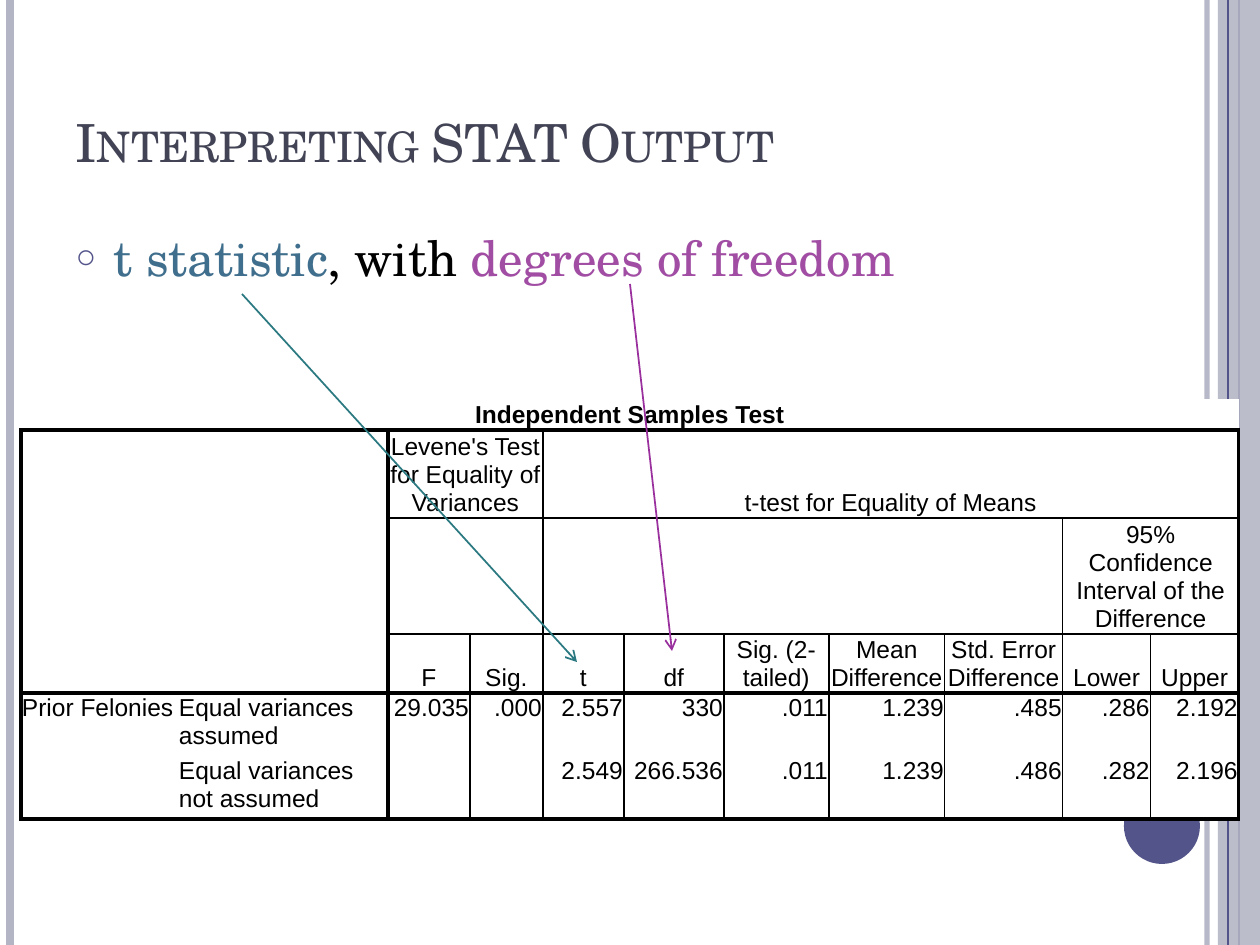
from lxml import etree
from pptx import Presentation
from pptx.dml.color import RGBColor
from pptx.enum.shapes import MSO_CONNECTOR, MSO_SHAPE
from pptx.enum.text import MSO_ANCHOR, MSO_AUTO_SIZE, PP_ALIGN
from pptx.oxml.ns import qn
from pptx.util import Pt

STRAIGHT = MSO_CONNECTOR.STRAIGHT
RECT, OVAL = MSO_SHAPE.RECTANGLE, MSO_SHAPE.OVAL
TOP, BOTTOM, MIDDLE = MSO_ANCHOR.TOP, MSO_ANCHOR.BOTTOM, MSO_ANCHOR.MIDDLE
LEFT, CENTER, RIGHT = PP_ALIGN.LEFT, PP_ALIGN.CENTER, PP_ALIGN.RIGHT
NO_FIT = MSO_AUTO_SIZE.NONE

SCALE = 914400 / 126
COLORS = {
    "white": "FFFFFF", "black": "000000", "lavender": "B3B4C4",
    "indigo": "53548A", "title": "424456", "t_text": "406F8D",
    "df_text": "A04DA3", "t_arrow": "2B7981", "df_arrow": "9A309E",
}
SERIF, SANS = "TeX Gyre Schola", "Arial"


def emu(*lengths):
    return [round(length * SCALE) for length in lengths]


def draw_line(x1, y1, x2, y2, color, width, alpha=100, arrow=False):
    connector = slide.shapes.add_connector(STRAIGHT, *emu(x1, y1, x2, y2))
    connector.line.color.rgb = RGBColor.from_string(COLORS[color])
    connector.line.width = Pt(width)
    properties = connector._element.spPr
    outline = properties.find(qn("a:ln"))
    if alpha < 100:
        shade = outline.find(".//" + qn("a:srgbClr"))
        etree.SubElement(shade, qn("a:alpha"), val=str(alpha * 1000))
    if arrow:
        etree.SubElement(outline, qn("a:tailEnd"), type="arrow")
    etree.SubElement(properties, qn("a:effectLst"))


prs = Presentation()
prs.slide_width, prs.slide_height = emu(1260, 945)
slide = prs.slides.add_slide(prs.slide_layouts[1])

draw_line(1207, 0, 1207, 945, "lavender", 3, alpha=93)
draw_line(10, 0, 10, 945, "lavender", 4.5)
draw_line(1239, 0, 1239, 945, "indigo", 1.5)
for kind, box, color, alpha in [
    (RECT, (1218, 0, 42, 945), "lavender", 87),
    (OVAL, (1124, 788, 76, 76), "indigo", 100),
]:
    ornament = slide.shapes.add_shape(kind, *emu(*box))
    ornament.shadow.inherit = False
    ornament.fill.solid()
    ornament.fill.fore_color.rgb = RGBColor.from_string(COLORS[color])
    ornament.line.fill.background()
    if alpha < 100:
        shade = ornament._element.spPr.find(".//" + qn("a:srgbClr"))
        etree.SubElement(shade, qn("a:alpha"), val=str(alpha * 1000))
draw_line(1228, 0, 1228, 945, "indigo", 0.75)

title, body = slide.placeholders
for holder, box, anchor, size, parts in [
    (title, (63, 38, 1134, 141), BOTTOM, 30, [("Interpreting STAT Output", "title")]),
    (body, (63, 221, 1134, 210), TOP, 28,
     [("t statistic", "t_text"), (", with ", "black"), ("degrees of freedom", "df_text")]),
]:
    holder.left, holder.top, holder.width, holder.height = emu(*box)
    frame = holder.text_frame
    frame.auto_size = NO_FIT
    frame.vertical_anchor = anchor
    paragraph = frame.paragraphs[0]
    paragraph.alignment = LEFT
    for words, color in parts:
        run = paragraph.add_run()
        run.text = words
        for attribute, value in {"name": SERIF, "size": Pt(size)}.items():
            setattr(run.font, attribute, value)
        run.font.color.rgb = RGBColor.from_string(COLORS[color])

title.text_frame.paragraphs[0].runs[0]._r.get_or_add_rPr().set("cap", "small")

statement = body.text_frame.paragraphs[0]
statement.space_before = Pt(6)
bullet = statement._p.get_or_add_pPr()
indent = emu(38)[0]
bullet.set("marL", str(indent))
bullet.set("indent", str(-indent))
bullet_color = etree.SubElement(bullet, qn("a:buClr"))
etree.SubElement(bullet_color, qn("a:srgbClr"), val=COLORS["indigo"])
etree.SubElement(bullet, qn("a:buSzPct"), val="70000")
etree.SubElement(bullet, qn("a:buChar"), char="○")

column_widths = [157, 210, 82, 73, 81, 100, 105, 116, 118, 88, 88]
row_heights = [31, 88, 116, 59, 63, 63]
test_rows = [
    [("Independent Samples Test", 11)],
    [("", 1), ("", 1), ("Levene's Test for Equality of Variances", 2),
     ("t-test for Equality of Means", 7)],
    [("", 1), ("", 1), ("", 2), ("", 5),
     ("95% Confidence Interval of the Difference", 2)],
    [(label, 1) for label in ["", "", "F", "Sig.", "t", "df", "Sig. (2-tailed)",
                              "Mean Difference", "Std. Error Difference",
                              "Lower", "Upper"]],
    [(value, 1) for value in ["Prior Felonies", "Equal variances assumed", "29.035",
                              ".000", "2.557", "330", ".011", "1.239", ".485",
                              ".286", "2.192"]],
    [(value, 1) for value in ["", "Equal variances not assumed", "", "", "2.549",
                              "266.536", ".011", "1.239", ".486", ".282", "2.196"]],
]
THICK, THIN = 2.25, 1
row_edges = {1: THICK, 2: THIN, 3: THIN, 4: THICK, 6: THICK}
column_edges = {0: THICK, 2: THICK, 11: THICK, **dict.fromkeys(range(3, 11), THIN)}

table_frame = slide.shapes.add_table(
    len(row_heights), len(column_widths),
    *emu(21, 399, sum(column_widths), sum(row_heights)))
table = table_frame.table
table.first_row = table.horz_banding = False
table._tbl.tblPr.find(qn("a:tableStyleId")).text = "{2D5ABB26-0587-4C30-8999-92F81FD0307C}"
for column, width in zip(table.columns, emu(*column_widths)):
    column.width = width
for row, height in zip(table.rows, emu(*row_heights)):
    row.height = height

margin = emu(1)[0]
for r, entries in enumerate(test_rows):
    c = 0
    for words, span in entries:
        cell = table.cell(r, c)
        if cell.is_spanned:
            c += span
            continue
        depth = 2 if (r, c) == (4, 0) else 1
        if span > 1 or depth > 1:
            cell.merge(table.cell(r + depth - 1, c + span - 1))
        cell_format = {
            "margin_left": margin, "margin_right": margin,
            "margin_top": margin, "margin_bottom": margin,
            "vertical_anchor": MIDDLE if r == 0 else BOTTOM if r < 4 else TOP,
        }
        for attribute, value in cell_format.items():
            setattr(cell, attribute, value)
        paragraph = cell.text_frame.paragraphs[0]
        paragraph.alignment = CENTER if r < 4 else LEFT if c < 2 else RIGHT
        paragraph.line_spacing = Pt(16)
        if words:
            run = paragraph.add_run()
            run.text = words
            for attribute, value in {"name": SANS, "size": Pt(14), "bold": r == 0}.items():
                setattr(run.font, attribute, value)
            run.font.color.rgb = RGBColor.from_string(COLORS["black"])
        sides = {
            "a:lnL": column_edges.get(c) if r else None,
            "a:lnR": column_edges.get(c + span) if r else None,
            "a:lnT": row_edges.get(r),
            "a:lnB": row_edges.get(r + depth),
        }
        cell_properties = cell._tc.get_or_add_tcPr()
        for side, weight in sides.items():
            if weight == THIN and side in ("a:lnT", "a:lnB") and c < 2:
                weight = None
            border = etree.SubElement(cell_properties, qn(side), w=str(Pt(weight or 0)))
            if weight:
                paint = etree.SubElement(border, qn("a:solidFill"))
                etree.SubElement(paint, qn("a:srgbClr"), val=COLORS["black"])
            else:
                etree.SubElement(border, qn("a:noFill"))
        cell.fill.solid()
        cell.fill.fore_color.rgb = RGBColor.from_string(COLORS["white"])
        c += span

draw_line(242, 294, 577, 662, "t_arrow", 1, arrow=True)
draw_line(630, 284, 672, 651, "df_arrow", 1, arrow=True)

prs.save("out.pptx")
